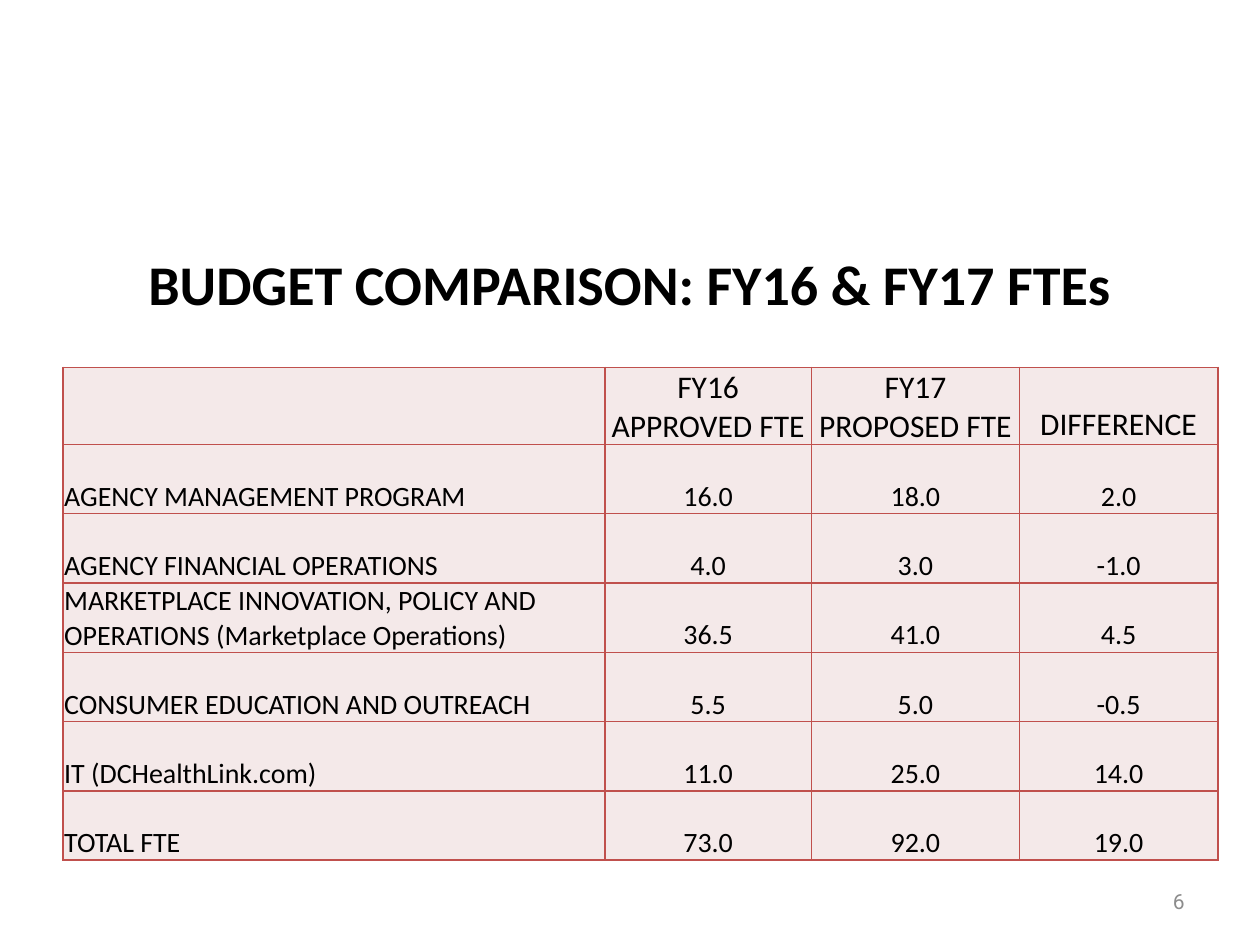
from dataclasses import dataclass

from lxml import etree
from pptx import Presentation
from pptx.dml.color import RGBColor
from pptx.enum.text import MSO_ANCHOR, PP_ALIGN
from pptx.oxml.ns import qn
from pptx.util import Pt

LEFT, CENTER, RIGHT = PP_ALIGN.LEFT, PP_ALIGN.CENTER, PP_ALIGN.RIGHT
MIDDLE, BOTTOM = MSO_ANCHOR.MIDDLE, MSO_ANCHOR.BOTTOM

COLORS = {
    "text": "000000",
    "number": "8C8C8C",
    "cell": "F4E9E9",
    "border": "C0504D",
}
COL_WIDTHS = (309.6, 118.1, 118.8, 113.4)
ROW_HEIGHT = 39.6
CELL_MARGIN = 0.72


@dataclass
class Row:
    label: str
    values: tuple[str, str, str]
    size: int = 16


ROWS = [
    Row("", ("FY16 APPROVED FTE", "FY17 PROPOSED FTE", "DIFFERENCE"), 18),
    Row("AGENCY MANAGEMENT PROGRAM", ("16.0", "18.0", "2.0")),
    Row("AGENCY FINANCIAL OPERATIONS", ("4.0", "3.0", "-1.0")),
    Row("MARKETPLACE INNOVATION, POLICY AND OPERATIONS (Marketplace Operations)",
        ("36.5", "41.0", "4.5")),
    Row("CONSUMER EDUCATION AND OUTREACH", ("5.5", "5.0", "-0.5")),
    Row("IT (DCHealthLink.com)", ("11.0", "25.0", "14.0")),
    Row("TOTAL FTE", ("73.0", "92.0", "19.0")),
]


def write(tf, text: str, *, size: float, font: str = "Calibri",
          color: str = "text", bold: bool = False, align=LEFT) -> None:
    tf.word_wrap = True
    p = tf.paragraphs[0]
    p.alignment = align
    p.font.size = Pt(size)
    if text:
        r = p.add_run()
        r.text = text
        r.font.name = font
        r.font.size = Pt(size)
        r.font.bold = bold
        r.font.color.rgb = RGBColor.from_string(COLORS[color])


def add_text(s, left: float, top: float, width: float, height: float,
             text: str, **fmt) -> None:
    sp = s.shapes.add_textbox(Pt(left), Pt(top), Pt(width), Pt(height))
    sp.text_frame.vertical_anchor = MIDDLE
    write(sp.text_frame, text, **fmt)


def add_borders(cell) -> None:
    tc_pr = cell._tc.get_or_add_tcPr()
    for side in ("lnL", "lnR", "lnT", "lnB"):
        ln = etree.SubElement(tc_pr, qn(f"a:{side}"), w=str(Pt(1)))
        fill = etree.SubElement(ln, qn("a:solidFill"))
        etree.SubElement(fill, qn("a:srgbClr"), val=COLORS["border"])


def fill_cell(cell, text: str, size: float, align) -> None:
    cell.margin_left = cell.margin_right = cell.margin_top = Pt(CELL_MARGIN)
    cell.margin_bottom = 0
    cell.vertical_anchor = BOTTOM
    add_borders(cell)
    cell.fill.solid()
    cell.fill.fore_color.rgb = RGBColor.from_string(COLORS["cell"])
    write(cell.text_frame, text, size=size, align=align)


def add_budget_table(s, left: float, top: float, rows: list[Row]) -> None:
    table = s.shapes.add_table(
        len(rows), len(COL_WIDTHS), Pt(left), Pt(top),
        Pt(sum(COL_WIDTHS)), Pt(ROW_HEIGHT * len(rows))).table
    table.first_row = table.horz_banding = False
    for col, width in zip(table.columns, COL_WIDTHS):
        col.width = Pt(width)
    for i, row in enumerate(rows):
        table.rows[i].height = Pt(ROW_HEIGHT)
        for j, text in enumerate((row.label, *row.values)):
            fill_cell(table.cell(i, j), text, row.size, CENTER if j else LEFT)


def main() -> None:
    prs = Presentation()
    prs.slide_width, prs.slide_height = Pt(720), Pt(540)
    s = prs.slides.add_slide(prs.slide_layouts[6])
    add_text(s, 36, 126, 648, 72, "BUDGET COMPARISON: FY16 & FY17 FTEs",
             size=32, bold=True, align=CENTER)
    add_text(s, 516, 500.5, 168, 28.75, "6",
             size=12, font="Roboto", color="number", align=RIGHT)
    add_budget_table(s, 36, 210, ROWS)
    prs.save("out.pptx")


if __name__ == "__main__":
    main()
